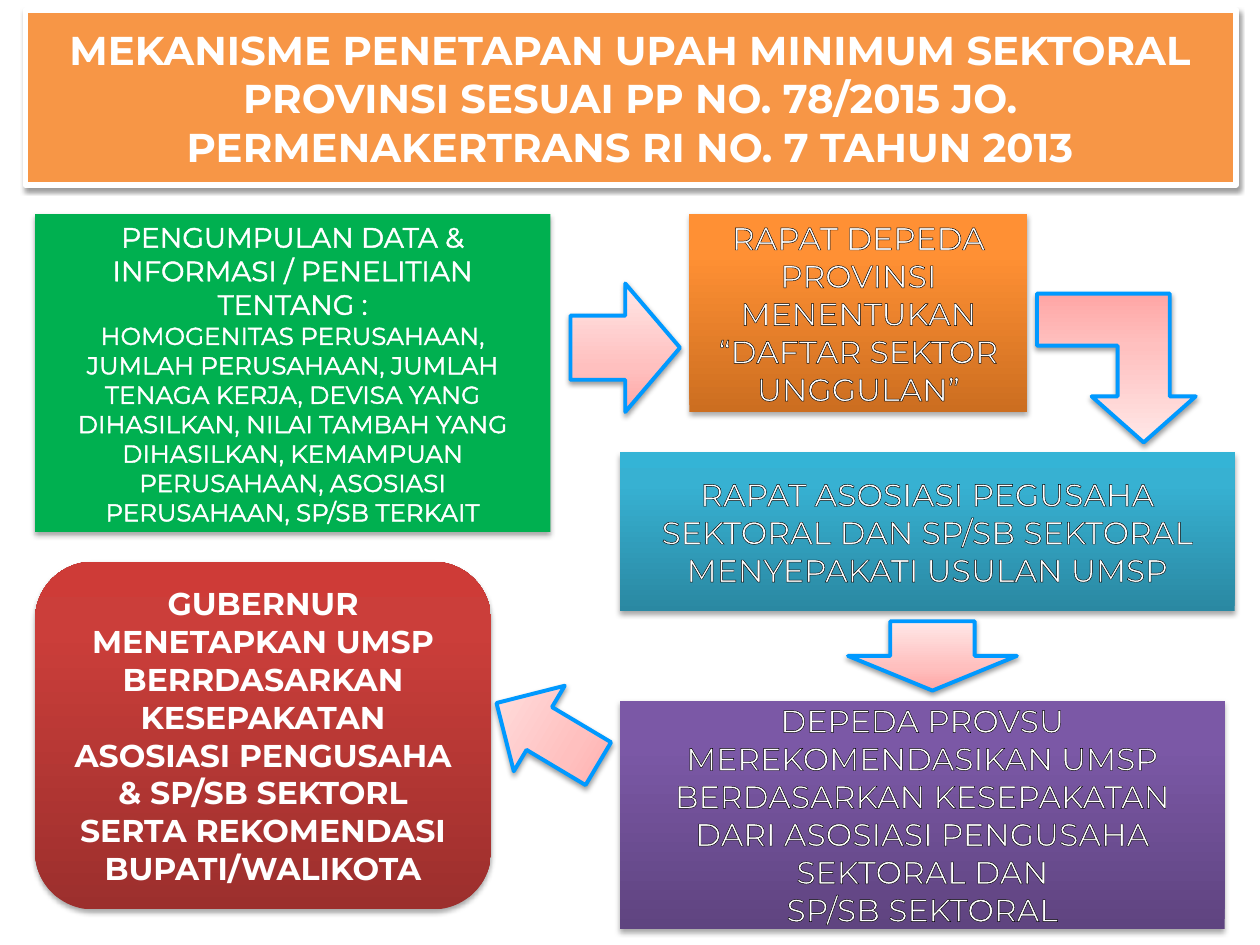
from lxml.etree import SubElement
from pptx import Presentation
from pptx.dml.color import RGBColor
from pptx.enum.shapes import MSO_SHAPE
from pptx.enum.text import MSO_ANCHOR, PP_ALIGN
from pptx.oxml.ns import qn
from pptx.util import Pt

FONT = "Montserrat"
WHITE = "FFFFFF"
BLACK = "000000"
GREEN = "00B050"
TITLE_ORANGE = "F79646"
ARROW_BLUE = "0099FF"
ORANGE = [(0, "CC6E20"), (80, "FF9034"), (100, "FF9136")]
TEAL = [(0, "2A88A2"), (80, "37B1D2"), (100, "34B4D6")]
PURPLE = [(0, "5F4480"), (80, "7B58A6"), (100, "7C57A8")]
RED = [(0, "9C2F2D"), (80, "CB3E3A"), (100, "CE3B37")]
PINK = [(0, "FFA6A5"), (35, "FFC0BF"), (100, "FFE7E7")]


def rgb(value):
    return RGBColor.from_string(value)


def add_color(parent, value):
    return SubElement(parent, qn("a:srgbClr"), val=str(rgb(value)))


class Deck:
    def __init__(self, width, height):
        self.prs = Presentation()
        self.prs.slide_width, self.prs.slide_height = Pt(width), Pt(height)
        self.slide = self.prs.slides.add_slide(self.prs.slide_layouts[6])

    def paint(self, s, fill):
        if isinstance(fill, str):
            s.fill.solid()
            s.fill.fore_color.rgb = rgb(fill)
            return
        s.fill.gradient()
        s.fill.gradient_angle = 90
        stops = s._element.spPr.find(qn("a:gradFill")).find(qn("a:gsLst"))
        for stop in list(stops):
            stops.remove(stop)
        for position, color in fill:
            add_color(SubElement(stops, qn("a:gs"), pos=str(position * 1000)), color)

    def shadow(self, s, alpha, distance):
        s.shadow.inherit = False
        effects = s._element.spPr.find(qn("a:effectLst"))
        outer = SubElement(effects, qn("a:outerShdw"), blurRad=str(Pt(3.1)),
                           dist=str(Pt(distance)), dir="5400000", rotWithShape="0")
        SubElement(add_color(outer, BLACK), qn("a:alpha"), val=str(alpha * 1000))

    def shape(self, kind, at, fill, line=None, weight=0):
        s = self.slide.shapes.add_shape(kind, *(Pt(v) for v in at))
        self.paint(s, fill)
        if line:
            s.line.color.rgb = rgb(line)
            s.line.width = Pt(weight)
            self.shadow(s, 38, 1.6)
        else:
            s.line.fill.background()
            self.shadow(s, 35, 1.8)
        return s

    def text(self, s, paragraphs, bold=False, outline=None):
        tf = s.text_frame
        tf.word_wrap = True
        tf.vertical_anchor = MSO_ANCHOR.MIDDLE
        for i, (words, size) in enumerate(paragraphs):
            p = tf.add_paragraph() if i else tf.paragraphs[0]
            p.alignment = PP_ALIGN.CENTER
            r = p.add_run()
            r.text = words
            r.font.name, r.font.size, r.font.bold = FONT, Pt(size), bold
            r.font.color.rgb = rgb(WHITE)
            if outline:
                props = r._r.get_or_add_rPr()
                ln = SubElement(props, qn("a:ln"), w=str(Pt(1.45)))
                add_color(SubElement(ln, qn("a:solidFill")), outline)
                props.insert(0, ln)

    def title(self, at, words):
        s = self.shape(MSO_SHAPE.RECTANGLE, at, TITLE_ORANGE, WHITE, 3)
        self.text(s, [(words, 23)], bold=True)

    def step(self, at, fill, paragraphs, outline=BLACK):
        s = self.shape(MSO_SHAPE.RECTANGLE, at, fill)
        self.text(s, paragraphs, outline=outline)

    def result(self, at, fill, words):
        s = self.shape(MSO_SHAPE.FLOWCHART_ALTERNATE_PROCESS, at, fill)
        self.text(s, [(words, 18)], bold=True)

    def arrow(self, kind, at, rotation=0, flip=False, adjustments=()):
        s = self.shape(kind, at, PINK, ARROW_BLUE, 2.25)
        s.rotation = rotation
        for i, value in enumerate(adjustments):
            s.adjustments[i] = value
        if flip:
            s._element.spPr.find(qn("a:xfrm")).set("flipV", "1")


def main():
    deck = Deck(720, 540)
    deck.title((14.4, 5.8, 692, 100),
               "MEKANISME PENETAPAN UPAH MINIMUM SEKTORAL PROVINSI SESUAI "
               "PP NO. 78/2015 JO. PERMENAKERTRANS RI NO. 7 TAHUN 2013")
    deck.step((20, 122.4, 294.5, 181.5), GREEN, [
        ("PENGUMPULAN DATA & INFORMASI / PENELITIAN TENTANG :", 16),
        ("HOMOGENITAS PERUSAHAAN, JUMLAH PERUSAHAAN, JUMLAH TENAGA KERJA, "
         "DEVISA YANG DIHASILKAN, NILAI TAMBAH YANG DIHASILKAN, KEMAMPUAN "
         "PERUSAHAAN, ASOSIASI PERUSAHAAN, SP/SB TERKAIT", 14),
    ], outline=WHITE)
    deck.step((394, 122.4, 193, 113), ORANGE, [
        ("RAPAT DEPEDA PROVINSI MENENTUKAN “DAFTAR SEKTOR UNGGULAN”", 18),
    ])
    deck.step((354.2, 258.5, 351.4, 90.7), TEAL, [
        ("RAPAT ASOSIASI PEGUSAHA SEKTORAL DAN SP/SB SEKTORAL "
         "MENYEPAKATI USULAN UMSP", 18),
    ])
    deck.step((354.2, 400.3, 345.6, 130.3), PURPLE, [
        ("DEPEDA PROVSU", 18),
        ("MEREKOMENDASIKAN UMSP BERDASARKAN KESEPAKATAN DARI ASOSIASI "
         "PENGUSAHA SEKTORAL DAN", 18),
        ("SP/SB SEKTORAL", 18),
    ])
    deck.result((20, 321, 260.6, 198.7), RED,
                "GUBERNUR MENETAPKAN UMSP BERRDASARKAN KESEPAKATAN ASOSIASI "
                "PENGUSAHA & SP/SB SEKTORL SERTA REKOMENDASI BUPATI/WALIKOTA")
    deck.arrow(MSO_SHAPE.RIGHT_ARROW, (326, 162, 62.6, 73.4))
    deck.arrow(MSO_SHAPE.BENT_UP_ARROW, (592.6, 167.8, 90.7, 85),
               flip=True, adjustments=(0.35, 0.35, 0.31))
    deck.arrow(MSO_SHAPE.DOWN_ARROW, (484.6, 355, 96.5, 39.6))
    deck.arrow(MSO_SHAPE.UP_ARROW, (284.4, 385.2, 56.9, 67.7), rotation=300.8)
    deck.prs.save("out.pptx")


if __name__ == "__main__":
    main()
